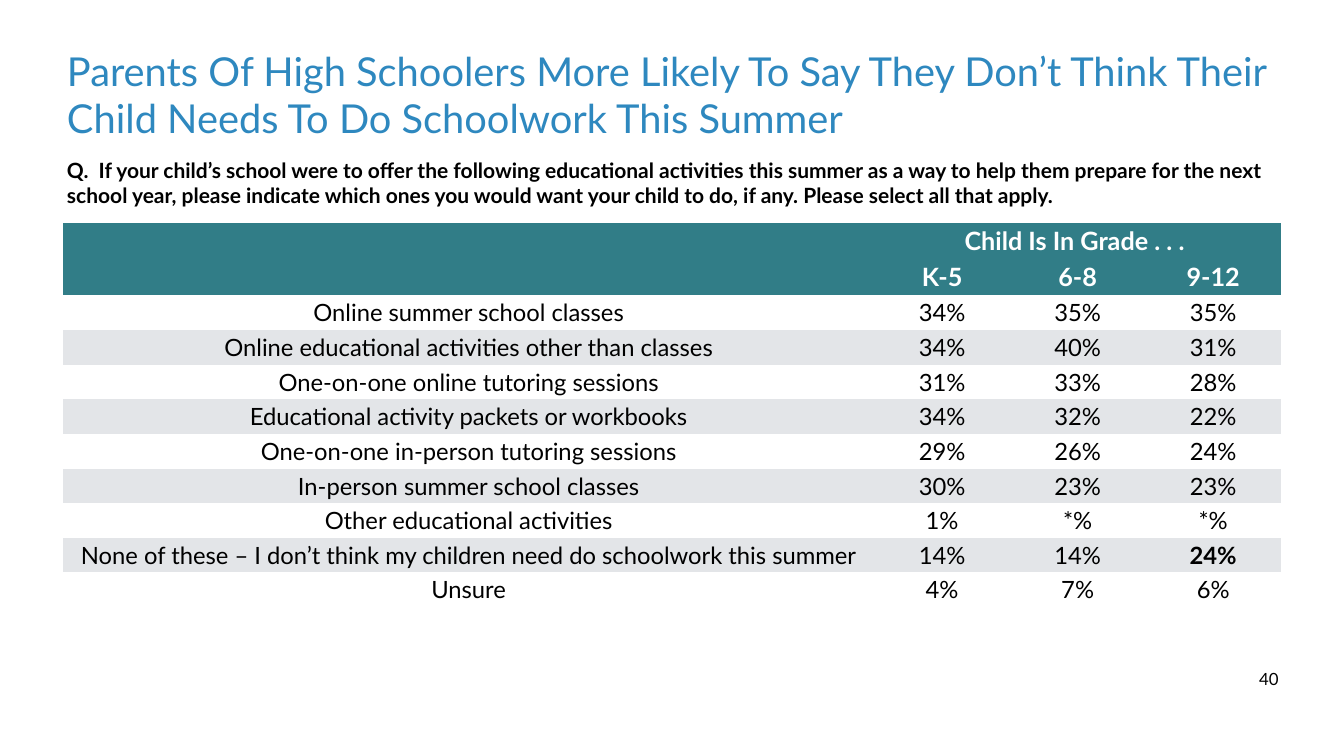
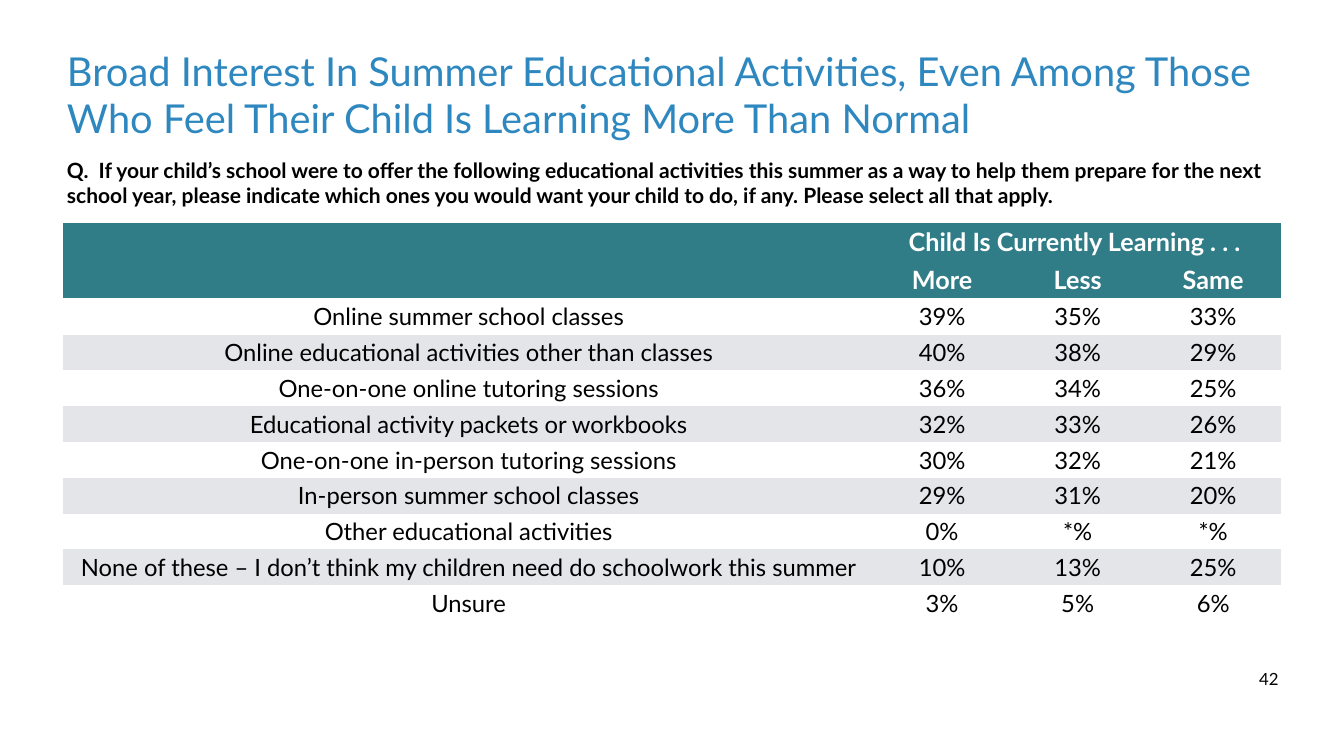
from pptx import Presentation
from pptx.dml.color import RGBColor
from pptx.enum.text import MSO_ANCHOR, MSO_AUTO_SIZE, PP_ALIGN
from pptx.util import Inches, Pt

BLUE = RGBColor(0x2E, 0x88, 0xBF)
TEAL = RGBColor(0x31, 0x7D, 0x87)
GREY = RGBColor(0xE3, 0xE5, 0xE8)
WHITE = RGBColor(0xFF, 0xFF, 0xFF)
BLACK = RGBColor(0, 0, 0)
LEFT, CENTER = PP_ALIGN.LEFT, PP_ALIGN.CENTER
MIDDLE = MSO_ANCHOR.MIDDLE
GROW = MSO_AUTO_SIZE.SHAPE_TO_FIT_TEXT
FONT = "Lato"
PLAIN = "{2D5ABB26-0587-4C30-8999-92F81FD0307C}"
EDGE, WIDE = 1.25, 24.17
COLS = [16.1, 2.69, 2.69, 2.69]

QUERY = (
    "Q.  If your child’s school were to offer the following educational "
    "activities this summer as a way to help them prepare for the next school "
    "year, please indicate which ones you would want your child to do, if any. "
    "Please select all that apply."
)
ITEMS = [
    "Online summer school classes",
    "Online educational activities other than classes",
    "One-on-one online tutoring sessions",
    "Educational activity packets or workbooks",
    "One-on-one in-person tutoring sessions",
    "In-person summer school classes",
    "Other educational activities",
    "None of these – I don’t think my children need do schoolwork this summer",
    "Unsure",
]
PAGES = [
    {
        "title": "Parents Of High Schoolers More Likely To Say They Don’t "
                 "Think Their Child Needs To Do Schoolwork This Summer",
        "page": "40",
        "group": "Child Is In Grade . . . ",
        "heads": ["K-5", "6-8", "9-12"],
        "rates": [
            ["34%", "35%", "35%"],
            ["34%", "40%", "31%"],
            ["31%", "33%", "28%"],
            ["34%", "32%", "22%"],
            ["29%", "26%", "24%"],
            ["30%", "23%", "23%"],
            ["1%", "*%", "*%"],
            ["14%", "14%", "24%"],
            ["4%", "7%", "6%"],
        ],
        "bold": {(9, 3)},
        "tall": 0.68,
    },
    {
        "title": "Broad Interest In Summer Educational Activities, Even Among "
                 "Those Who Feel Their Child Is Learning More Than Normal",
        "page": "42",
        "group": "Child Is Currently Learning . . . ",
        "heads": ["More", "Less", "Same"],
        "rates": [
            ["39%", "35%", "33%"],
            ["40%", "38%", "29%"],
            ["36%", "34%", "25%"],
            ["32%", "33%", "26%"],
            ["30%", "32%", "21%"],
            ["29%", "31%", "20%"],
            ["0%", "*%", "*%"],
            ["10%", "13%", "25%"],
            ["3%", "5%", "6%"],
        ],
        "bold": set(),
        "tall": 0.71,
    },
]


class Deck:
    def __init__(self):
        self.show = Presentation()
        self.show.slide_width = Inches(26.67)
        self.show.slide_height = Inches(15)
        self.slide = None

    def start(self):
        self.slide = self.show.slides.add_slide(self.show.slide_layouts[6])

    def put(self, frame, text, size, color, bold=False, align=LEFT):
        line = frame.paragraphs[0]
        line.alignment = align
        run = line.add_run()
        run.text = text
        font = run.font
        font.name, font.size, font.bold = FONT, Pt(size), bold
        font.color.rgb = color

    def inset(self, item, gap):
        item.margin_left = item.margin_right = Inches(gap)
        item.margin_top = item.margin_bottom = Inches(gap)

    def label(self, box, text, size, color, bold=False, align=LEFT, wrap=True):
        frame = self.slide.shapes.add_textbox(*map(Inches, box)).text_frame
        frame.word_wrap = wrap
        if not wrap:
            frame.auto_size = GROW
        self.inset(frame, 0.08)
        self.put(frame, text, size, color, bold, align)

    def title(self, text):
        self.label((EDGE, 0.84, WIDE, 2.08), text, 56.9, BLUE)

    def query(self):
        self.label((EDGE, 3.04, WIDE, 1.56), QUERY, 30, BLACK, bold=True)

    def number(self, text):
        self.label((24.89, 13.19, 0.58, 0.56), text, 24, BLACK,
                   align=CENTER, wrap=False)

    def cell(self, cell, text, fill, size, color, bold):
        cell.fill.solid()
        cell.fill.fore_color.rgb = fill
        cell.vertical_anchor = MIDDLE
        self.inset(cell, 0.06)
        if text:
            self.put(cell.text_frame, text, size, color, bold, CENTER)

    def table(self, group, heads, rates, strong, tall):
        rows = [["", group, "", ""], ["", *heads]]
        rows += [[item, *row] for item, row in zip(ITEMS, rates)]
        highs = [tall + 0.04] * 2 + [tall + 0.01] + [tall] * (len(ITEMS) - 1)
        grid = self.slide.shapes.add_table(
            len(rows), len(COLS), Inches(EDGE), Inches(4.42),
            Inches(WIDE), Inches(sum(highs))).table
        grid.first_row = grid.horz_banding = False
        grid._tbl.tblPr.find("{*}tableStyleId").text = PLAIN
        for col, width in zip(grid.columns, COLS):
            col.width = Inches(width)
        for r, (row, high) in enumerate(zip(rows, highs)):
            grid.rows[r].height = Inches(high)
            for c, text in enumerate(row):
                if r < 2:
                    look = TEAL, 36, WHITE, True
                else:
                    look = (GREY if r % 2 else WHITE), 34, BLACK, (r, c) in strong
                self.cell(grid.cell(r, c), text, *look)
        grid.cell(0, 1).merge(grid.cell(0, 3))


def main():
    deck = Deck()
    for page in PAGES:
        deck.start()
        deck.title(page["title"])
        deck.number(page["page"])
        deck.query()
        deck.table(page["group"], page["heads"], page["rates"],
                   page["bold"], page["tall"])
    deck.show.save("out.pptx")


if __name__ == "__main__":
    main()
